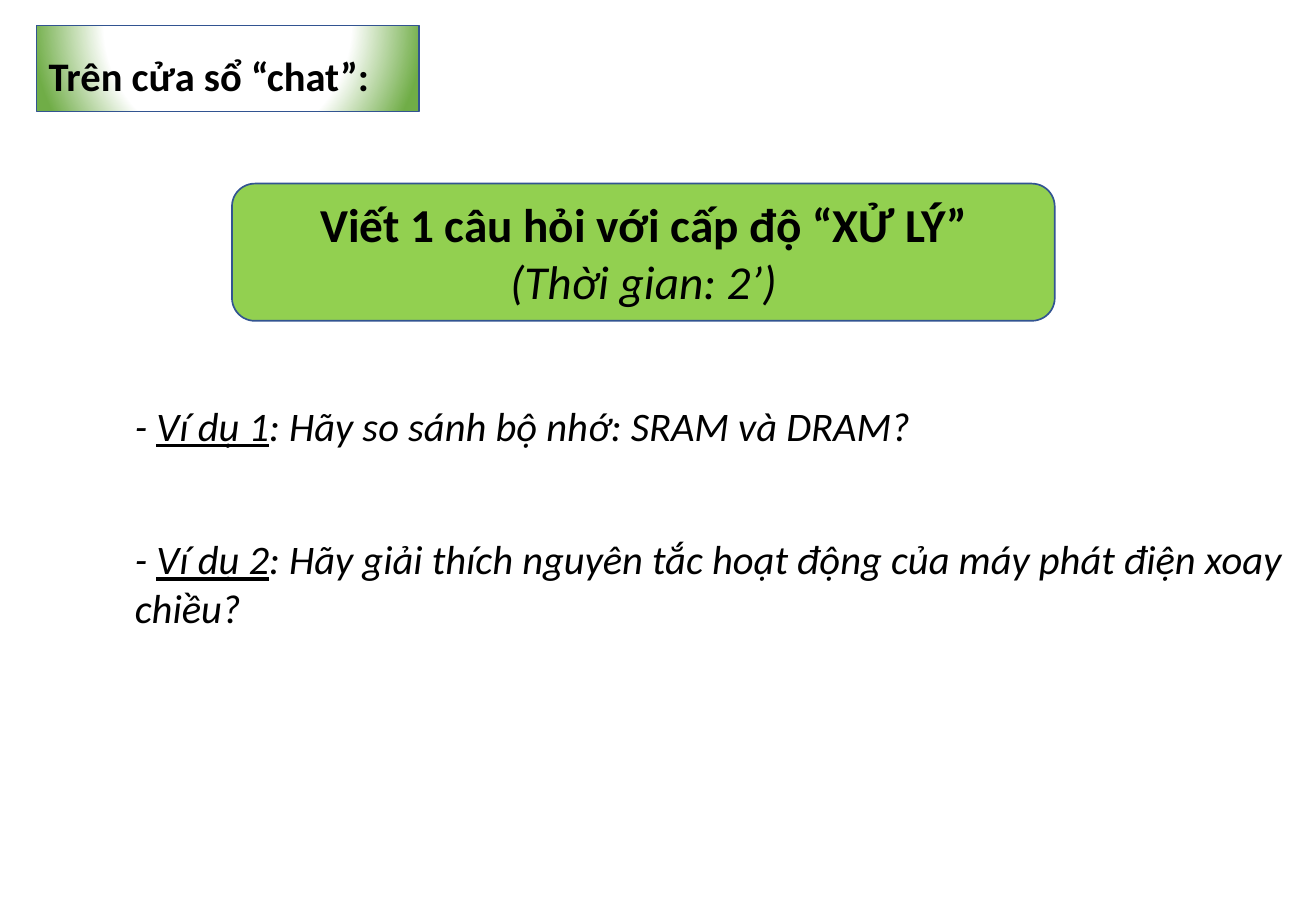
from pptx import Presentation
from pptx.dml.color import RGBColor
from pptx.enum import shapes, text
from pptx.oxml import parse_xml
from pptx.oxml.ns import nsdecls
from pptx.util import Cm, Pt

BLACK = RGBColor(0x00, 0x00, 0x00)
WHITE = RGBColor(0xFF, 0xFF, 0xFF)
GREEN = RGBColor(0x70, 0xAD, 0x47)
LIME = RGBColor(0x92, 0xD0, 0x50)
NAVY = RGBColor(0x32, 0x54, 0x91)


def add_span(para, words, size, bold=False, italic=False, underline=False):
    span = para.add_run()
    span.text = words
    font = span.font
    font.name, font.size, font.color.rgb = "Calibri", Pt(size), BLACK
    font.bold, font.italic, font.underline = bold, italic, underline


deck = Presentation()
deck.slide_width, deck.slide_height = Cm(27.51), Cm(19.05)
page = deck.slides.add_slide(deck.slide_layouts[5])

# Title: rounded label with a radial green gradient
title = page.shapes.title
title.left, title.top, title.width, title.height = Cm(0.76), Cm(0.53), Cm(8), Cm(1.8)
stops = "".join(
    f'<a:gs pos="{percent * 1000}"><a:srgbClr val="{colour}"/></a:gs>'
    for percent, colour in [(0, WHITE), (63, WHITE), (100, GREEN)]
)
for xml in (
    f'<a:prstGeom {nsdecls("a")} prst="roundRect"><a:avLst/></a:prstGeom>',
    f'<a:gradFill {nsdecls("a")}><a:gsLst>{stops}</a:gsLst><a:path path="circle">'
    '<a:fillToRect l="50000" t="-80000" r="50000" b="180000"/></a:path></a:gradFill>',
):
    title.element.spPr.append(parse_xml(xml))
title.text_frame.auto_size = text.MSO_AUTO_SIZE.NONE
para = title.text_frame.paragraphs[0]
para.alignment = text.PP_ALIGN.JUSTIFY
para.line_spacing = 1.3
add_span(para, "Trên cửa sổ “chat”:", 24, bold=True)

# Task banner
banner = page.shapes.add_shape(
    shapes.MSO_SHAPE.ROUNDED_RECTANGLE, Cm(4.85), Cm(3.84), Cm(17.2), Cm(2.87)
)
banner.shadow.inherit = False
banner.fill.solid()
banner.fill.fore_color.rgb = LIME
para = banner.text_frame.paragraphs[0]
add_span(para, "Viết 1 câu hỏi với cấp độ “XỬ LÝ”", 28, bold=True)
add_span(banner.text_frame.add_paragraph(), "(Thời gian: 2’)", 28, italic=True)
for para in banner.text_frame.paragraphs:
    para.alignment = text.PP_ALIGN.CENTER

for box in (title, banner):
    box.line.color.rgb = NAVY
    box.line.width = Pt(1)
    box.text_frame.vertical_anchor = text.MSO_ANCHOR.MIDDLE

# Example questions
examples = [
    (8.26, 24, 1.27, "Ví dụ 1", ": Hãy so sánh bộ nhớ: SRAM và DRAM?"),
    (11.05, 24.94, 2.31, "Ví dụ 2",
     ": Hãy giải thích nguyên tắc hoạt động của máy phát điện xoay chiều?"),
]
for top, width, height, label, question in examples:
    box = page.shapes.add_textbox(Cm(2.57), Cm(top), Cm(width), Cm(height))
    box.text_frame.word_wrap = True
    box.text_frame.auto_size = text.MSO_AUTO_SIZE.SHAPE_TO_FIT_TEXT
    para = box.text_frame.paragraphs[0]
    add_span(para, "- ", 24, italic=True)
    add_span(para, label, 24, italic=True, underline=True)
    add_span(para, question, 24, italic=True)

deck.save("out.pptx")
